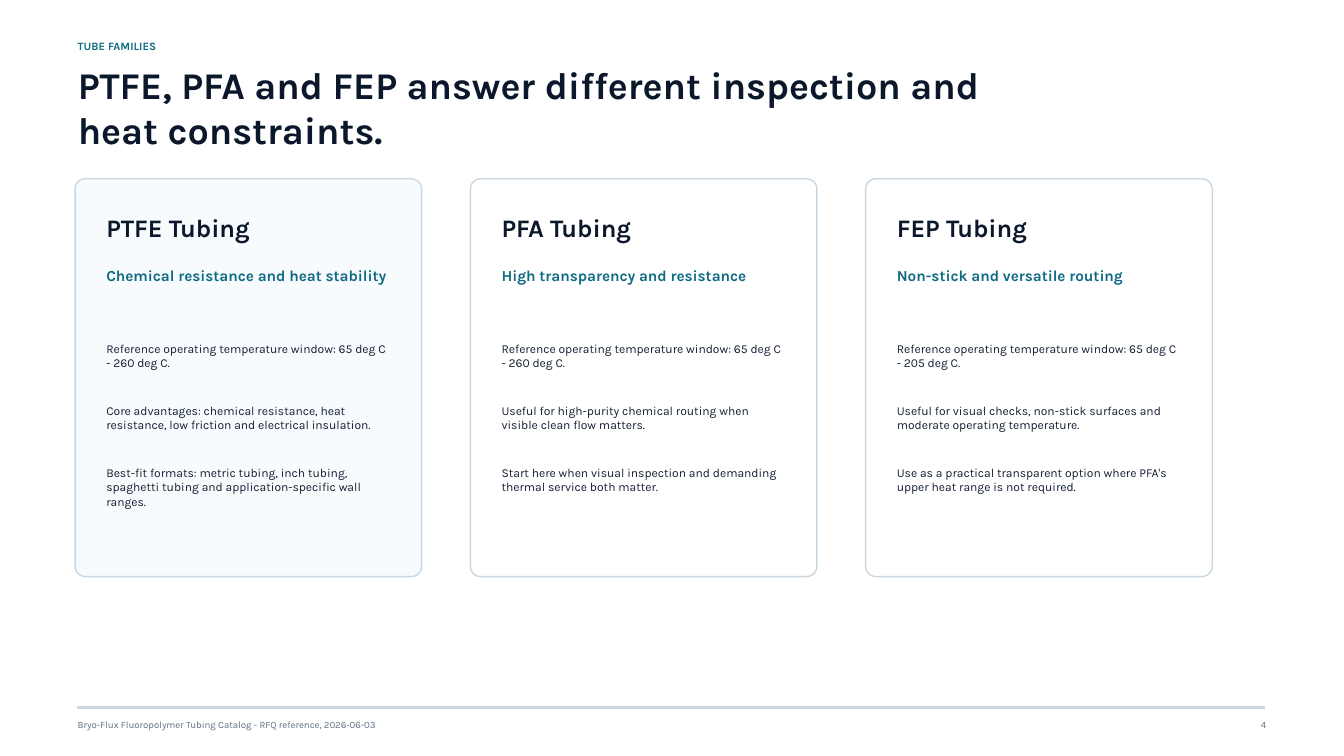
"""Build the tube families slide with three comparison cards."""
from pptx import Presentation
from pptx.dml.color import RGBColor
from pptx.enum.shapes import MSO_SHAPE
from pptx.enum.text import MSO_ANCHOR, MSO_AUTO_SIZE, PP_ALIGN
from pptx.util import Cm, Pt

FONT = "Karla"
INK, TEAL, BODY, MUTED, BORDER = "0B172A", "0F6B83", "142033", "607085", "C9D7E2"

KICKER = "TUBE FAMILIES"
TITLE = "PTFE, PFA and FEP answer different inspection and heat constraints."
FOOTER = "Bryo-Flux Fluoropolymer Tubing Catalog - RFQ reference, 2026-06-03"
PAGE_NUMBER = "4"
CARDS = [
    ("PTFE Tubing", "Chemical resistance and heat stability", "F8FBFD", [
        "Reference operating temperature window: 65 deg C - 260 deg C.",
        "Core advantages: chemical resistance, heat resistance, low friction and electrical insulation.",
        "Best-fit formats: metric tubing, inch tubing, spaghetti tubing and application-specific wall ranges.",
    ]),
    ("PFA Tubing", "High transparency and resistance", "FFFFFF", [
        "Reference operating temperature window: 65 deg C - 260 deg C.",
        "Useful for high-purity chemical routing when visible clean flow matters.",
        "Start here when visual inspection and demanding thermal service both matter.",
    ]),
    ("FEP Tubing", "Non-stick and versatile routing", "FFFFFF", [
        "Reference operating temperature window: 65 deg C - 205 deg C.",
        "Useful for visual checks, non-stick surfaces and moderate operating temperature.",
        "Use as a practical transparent option where PFA's upper heat range is not required.",
    ]),
]

MARGIN = 1.47
CARD_LEFT, CARD_TOP, CARD_WIDTH, CARD_HEIGHT, CARD_PITCH = 1.42, 3.38, 6.55, 7.52, 7.47
CARD_PADDING, CARD_TEXT_WIDTH = 0.59, 5.33
POINT_TOP, POINT_PITCH = 6.45, 1.17


def color(value):
    return RGBColor.from_string(value)


def set_text(shape, text, size, text_color, bold=False, align=PP_ALIGN.LEFT):
    frame = shape.text_frame
    frame.margin_left = frame.margin_top = frame.margin_right = frame.margin_bottom = 0
    frame.word_wrap = True
    frame.auto_size = MSO_AUTO_SIZE.NONE
    frame.vertical_anchor = MSO_ANCHOR.TOP
    frame.text = text
    paragraph = frame.paragraphs[0]
    paragraph.alignment = align
    paragraph.font.name = FONT
    paragraph.font.size = Pt(size)
    paragraph.font.bold = bold
    paragraph.font.color.rgb = color(text_color)


def add_text(slide, left, top, width, height, *style, **options):
    box = slide.shapes.add_textbox(Cm(left), Cm(top), Cm(width), Cm(height))
    set_text(box, *style, **options)


def add_panel(slide, kind, left, top, width, height, fill, line_width):
    shape = slide.shapes.add_shape(kind, Cm(left), Cm(top), Cm(width), Cm(height))
    shape.shadow.inherit = False
    shape.fill.solid()
    shape.fill.fore_color.rgb = color(fill)
    shape.line.color.rgb = color(BORDER)
    shape.line.width = Pt(line_width)
    return shape


def add_card(slide, index, name, benefit, fill, points):
    left = CARD_LEFT + index * CARD_PITCH
    card = add_panel(slide, MSO_SHAPE.ROUNDED_RECTANGLE, left, CARD_TOP,
                     CARD_WIDTH, CARD_HEIGHT, fill, 0.75)
    card.adjustments[0] = 0.03
    text_left = left + CARD_PADDING
    add_text(slide, text_left, 4.01, CARD_TEXT_WIDTH, 0.79, name, 13.5, INK, bold=True)
    add_text(slide, text_left, 5.03, CARD_TEXT_WIDTH, 0.97, benefit, 8.2, TEAL, bold=True)
    for row, point in enumerate(points):
        add_text(slide, text_left, POINT_TOP + row * POINT_PITCH,
                 CARD_TEXT_WIDTH, 0.89, point, 6.5, BODY)


def main():
    presentation = Presentation()
    presentation.slide_width, presentation.slide_height = Cm(25.4), Cm(14.29)
    slide = presentation.slides.add_slide(presentation.slide_layouts[5])

    add_text(slide, MARGIN, 0.74, 9.53, 0.48, KICKER, 6, TEAL, bold=True)
    title = slide.shapes.title
    title.left, title.top, title.width, title.height = Cm(MARGIN), Cm(1.17), Cm(17.2), Cm(1.22)
    set_text(title, TITLE, 20.2, INK, bold=True)

    for index, card in enumerate(CARDS):
        add_card(slide, index, *card)

    add_panel(slide, MSO_SHAPE.RECTANGLE, MARGIN, 13.36, 22.43, 0.03, BORDER, 0)
    add_text(slide, MARGIN, 13.59, 13.77, 0.36, FOOTER, 5.2, MUTED)
    add_text(slide, 22.76, 13.59, 1.17, 0.36, PAGE_NUMBER, 5.2, MUTED, align=PP_ALIGN.RIGHT)

    presentation.save("out.pptx")


if __name__ == "__main__":
    main()
